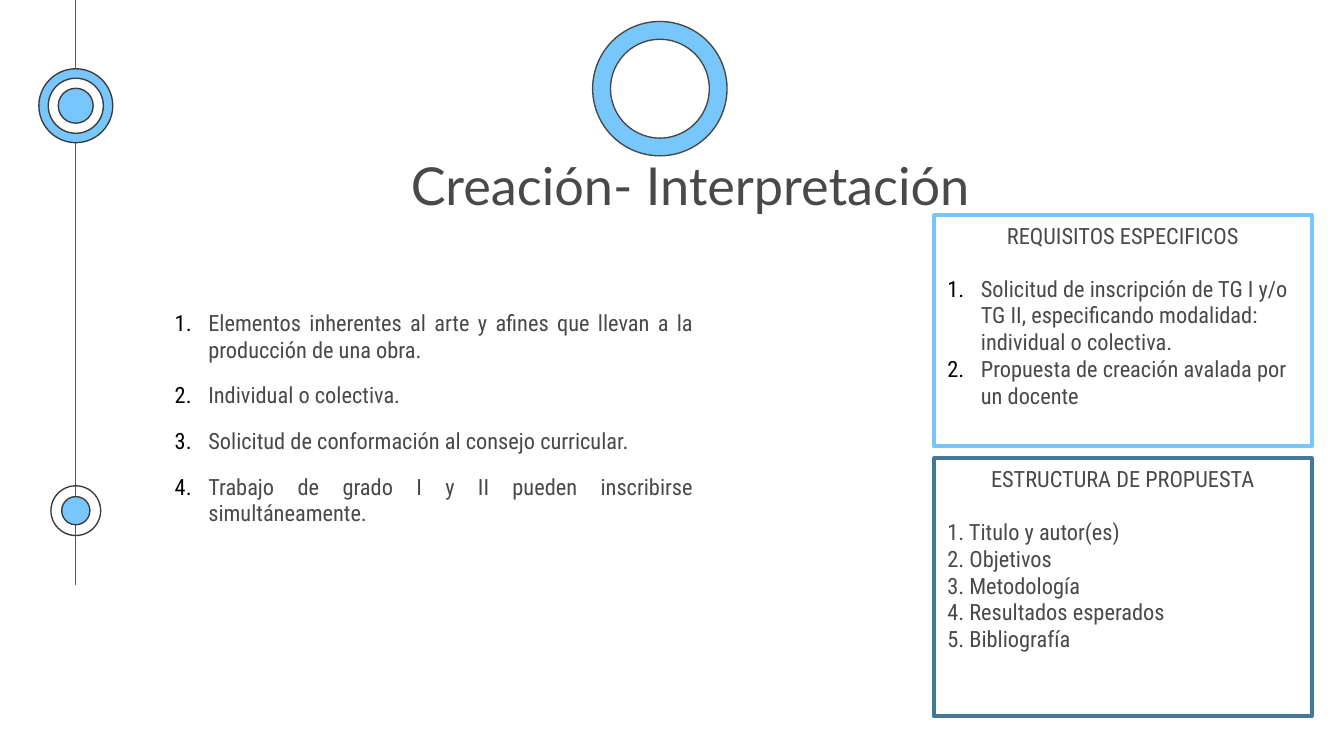
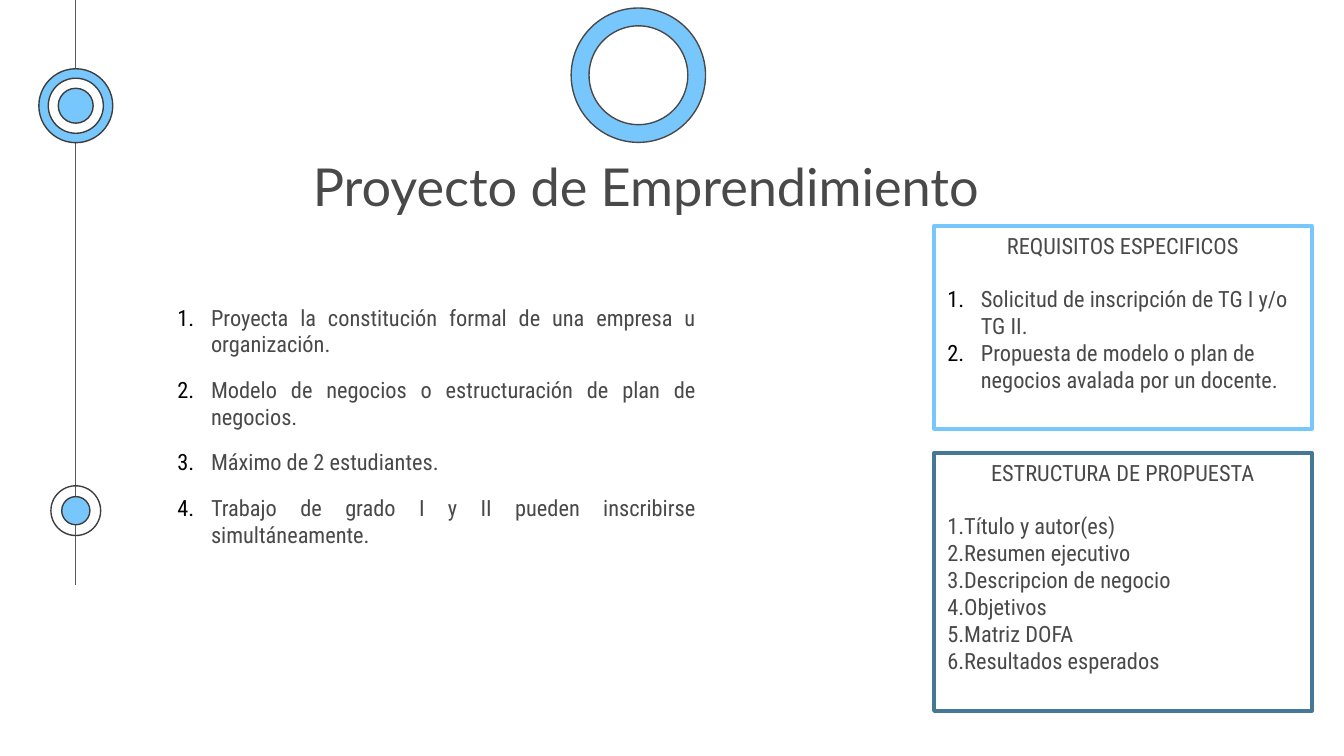
import dataclasses

import lxml.etree
import pptx
import pptx.dml.color
import pptx.enum.shapes
import pptx.enum.text
import pptx.oxml.ns
import pptx.util

ALIGN = pptx.enum.text.PP_ALIGN
SHAPE = pptx.enum.shapes.MSO_SHAPE
qn = pptx.oxml.ns.qn


@dataclasses.dataclass(frozen=True)
class Theme:
    sky: str = "77C6FC"
    steel: str = "477797"
    white: str = "FFFFFF"
    text: str = "494949"
    number: str = "000000"
    rail: str = "595959"
    outline: str = "3D3D3D"
    title_font: str = "Lato"
    body_font: str = "Roboto Condensed"
    title_size: float = 28
    body_size: float = 12
    item_gap: float = 10
    heading_gap: float = 14
    hairline: float = 0.75
    border: float = 2


T = Theme()
WIDTH, HEIGHT = pptx.util.Inches(10), pptx.util.Inches(5.625)
CELL = WIDTH / 100  # square grid: 100 columns, 56.25 rows
RAIL_COL = 5.64
PANEL_COL, PANEL_COLS = 69.5, 28.1

SLIDES = [
    dict(
        title="Creación- Interpretación", title_at=(20.6, 10.4),
        ring=(49.1, 6.6),
        points_at=(12, 22),
        points=["Elementos inherentes al arte y afines que llevan a la producción de una obra.",
                "Individual o colectiva.",
                "Solicitud de conformación al consejo curricular.",
                "Trabajo de grado I y II pueden inscribirse simultáneamente."],
        requirements_rows=(16, 17.2),
        requirements=["Solicitud de inscripción de TG I y/o TG II, especificando modalidad: "
                      "individual o colectiva.",
                      "Propuesta de creación avalada por un docente"],
        structure_rows=(34.1, 19.2),
        structure=["1. Titulo y autor(es)", "2. Objetivos", "3. Metodología",
                   "4. Resultados esperados", "5. Bibliografía"],
    ),
    dict(
        title="Proyecto de Emprendimiento", title_at=(17.3, 10.5),
        ring=(47.5, 5.6),
        points_at=(12.2, 21.6),
        points=["Proyecta la constitución formal de una empresa u organización.",
                "Modelo de negocios o estructuración de plan de negocios.",
                "Máximo de 2 estudiantes.",
                "Trabajo de grado I y II pueden inscribirse simultáneamente."],
        requirements_rows=(16.8, 15.1),
        requirements=["Solicitud de inscripción de TG I y/o TG II.",
                      "Propuesta de modelo o plan de negocios avalada por un docente."],
        structure_rows=(33.7, 19.2),
        structure=["1.Título y autor(es)", "2.Resumen ejecutivo", "3.Descripcion de negocio",
                   "4.Objetivos", "5.Matriz DOFA", "6.Resultados esperados"],
    ),
]


def cells(*counts):
    """Turn counts of grid cells into lengths."""
    return [pptx.util.Emu(round(n * CELL)) for n in counts]


def rgb(value):
    return pptx.dml.color.RGBColor.from_string(value)


def place(sp, col, row, cols, rows):
    sp.left, sp.top, sp.width, sp.height = cells(col, row, cols, rows)


def add_outlined(slide, kind, box, fill, line, weight):
    """Add a flat preset shape; fill None leaves it hollow."""
    sp = slide.shapes.add_shape(kind, *cells(*box))
    sp.shadow.inherit = False
    if fill:
        sp.fill.solid()
        sp.fill.fore_color.rgb = rgb(fill)
    else:
        sp.fill.background()
    sp.line.color.rgb = rgb(line)
    sp.line.width = pptx.util.Pt(weight)
    return sp


def add_circles(slide, center, circles, line):
    """Stack concentric circles given as (diameter, fill), largest first."""
    col, row = center
    return [add_outlined(slide, SHAPE.OVAL, (col - d / 2, row - d / 2, d, d),
                         fill, line, T.hairline)
            for d, fill in circles]


def add_rail(slide):
    line = slide.shapes.add_connector(pptx.enum.shapes.MSO_CONNECTOR.STRAIGHT,
                                      *cells(RAIL_COL, 0, RAIL_COL, 43.5))
    line.line.color.rgb = rgb(T.rail)
    line.line.width = pptx.util.Pt(T.hairline)
    lxml.etree.SubElement(line.element.spPr, qn("a:effectLst"))
    return line


def decorate_layout(layout, slide):
    """Draw the rail and its markers on the slide, then move them to the layout."""
    decor = [add_rail(slide)]
    decor += add_circles(slide, (RAIL_COL, 7.87),
                         [(5.5, T.sky), (4.1, T.white), (2.6, T.sky)], T.outline)
    decor += add_circles(slide, (RAIL_COL, 38), [(3.7, None), (2.1, T.sky)], T.outline)
    for sp in decor:
        layout.shapes.element.append(sp.element)


def set_frame(sp, inset):
    tf = sp.text_frame
    tf.word_wrap = True
    tf.auto_size = pptx.enum.text.MSO_AUTO_SIZE.NONE
    tf.vertical_anchor = pptx.enum.text.MSO_ANCHOR.TOP
    tf.margin_top = tf.margin_bottom = pptx.util.Inches(inset)
    tf.margin_left = tf.margin_right = pptx.util.Inches(0.1)
    return tf


def add_paragraph(tf, text, align, font=T.body_font, size=T.body_size, after=0):
    """Fill the empty first paragraph, or add one after the last."""
    p = tf.paragraphs[-1]
    if p.runs:
        p = tf.add_paragraph()
    p.alignment = align
    p.space_before = pptx.util.Pt(0)
    p.space_after = pptx.util.Pt(after)
    r = p.add_run()
    r.text = text
    r.font.name = font
    r.font.size = pptx.util.Pt(size)
    r.font.color.rgb = rgb(T.text)
    return p


def number(p):
    """Give a paragraph an automatic number and a hanging indent."""
    pPr = p._p.get_or_add_pPr()
    indent = pptx.util.Inches(0.25)
    pPr.set("marL", str(indent))
    pPr.set("indent", str(-indent))
    color = lxml.etree.SubElement(pPr, qn("a:buClr"))
    lxml.etree.SubElement(color, qn("a:srgbClr"), val=T.number)
    lxml.etree.SubElement(pPr, qn("a:buFont"), typeface=T.body_font)
    lxml.etree.SubElement(pPr, qn("a:buAutoNum"), type="arabicPeriod")


def fill_title(slide, text, at):
    sp = slide.shapes.title
    place(sp, *at, 61.5, 6.3)
    add_paragraph(set_frame(sp, 0.1), text, ALIGN.CENTER, T.title_font, T.title_size)


def fill_points(slide, points, at):
    sp = slide.placeholders[1]
    place(sp, *at, 40.6, 21.7)
    tf = set_frame(sp, 0.1)
    for text in points:
        number(add_paragraph(tf, text, ALIGN.JUSTIFY, after=T.item_gap))


def add_panel(slide, rows, border, heading, items, numbered=False):
    top, height = rows
    sp = add_outlined(slide, SHAPE.RECTANGLE, (PANEL_COL, top, PANEL_COLS, height),
                      T.white, border, T.border)
    tf = set_frame(sp, 0.05)
    add_paragraph(tf, heading, ALIGN.CENTER, after=T.heading_gap)
    for text in items:
        p = add_paragraph(tf, text, ALIGN.LEFT)
        if numbered:
            number(p)


def build_slide(slide, content):
    fill_title(slide, content["title"], content["title_at"])
    fill_points(slide, content["points"], content["points_at"])
    add_circles(slide, content["ring"], [(10, T.sky), (7.35, T.white)], T.text)
    add_panel(slide, content["requirements_rows"], T.sky, "REQUISITOS ESPECIFICOS",
              content["requirements"], numbered=True)
    add_panel(slide, content["structure_rows"], T.steel, "ESTRUCTURA DE PROPUESTA",
              content["structure"])


def main():
    prs = pptx.Presentation()
    prs.slide_width, prs.slide_height = WIDTH, HEIGHT
    layout = prs.slide_layouts[1]
    slides = [prs.slides.add_slide(layout) for _ in SLIDES]
    decorate_layout(layout, slides[0])
    for slide, content in zip(slides, SLIDES):
        build_slide(slide, content)
    prs.save("out.pptx")


if __name__ == "__main__":
    main()
